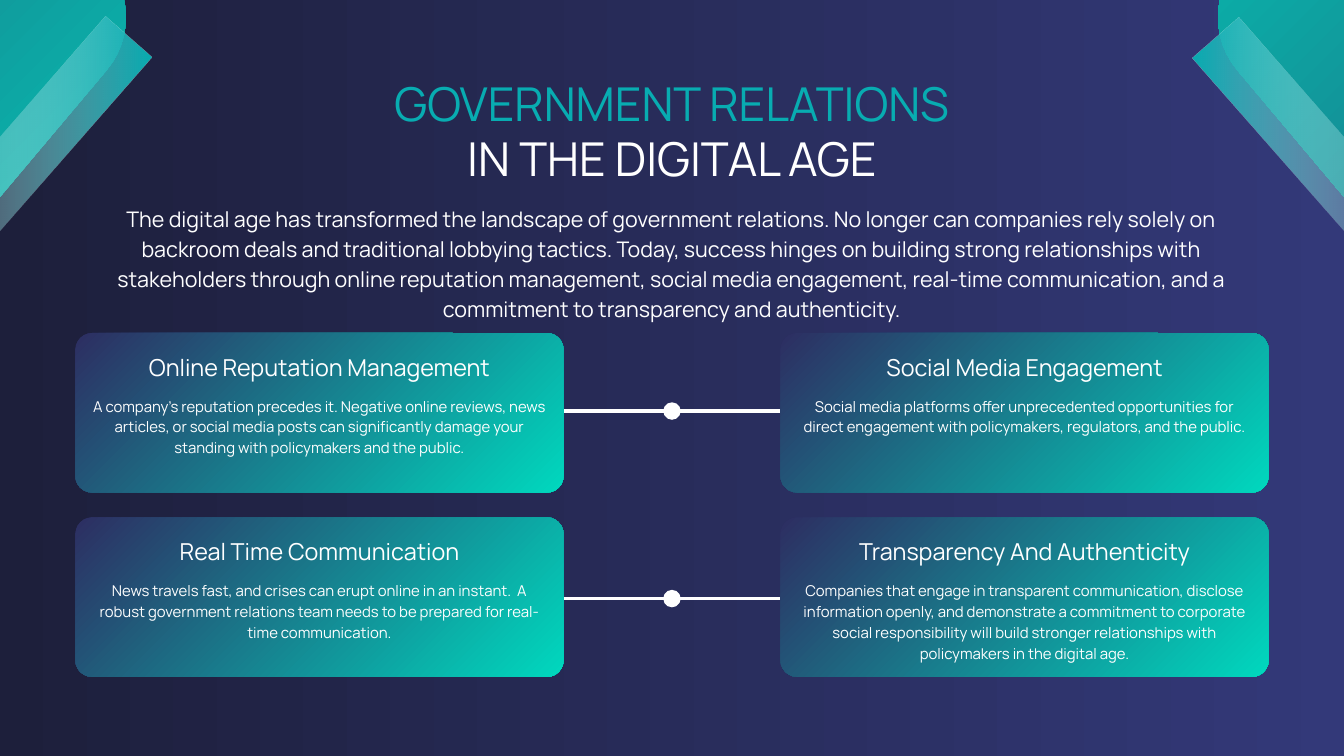
import collections
import dataclasses
import pptx
import pptx.dml.color
import pptx.enum.shapes
import pptx.enum.text
import pptx.oxml
import pptx.oxml.ns
import pptx.util

Cm = pptx.util.Cm
Pt = pptx.util.Pt
Shape = pptx.enum.shapes.MSO_SHAPE
Box = collections.namedtuple("Box", "left top width height")
Style = collections.namedtuple("Style", "size spacing color")


@dataclasses.dataclass(frozen=True)
class Theme:
    font: str = "Manrope"
    white: str = "FFFFFF"
    cyan: str = "08ACB1"
    indigo: str = "2D2E62"
    mint: str = "00D8BE"
    night: str = "1D1F3B"
    dusk: str = "333979"
    heading_accent: Style = Style(50, 70, "08ACB1")
    heading: Style = Style(50, 70, "FFFFFF")
    intro: Style = Style(23, 32.2, "FFFFFF")
    card_title: Style = Style(25, 35, "FFFFFF")
    card_body: Style = Style(16, 22.4, "FFFFFF")


THEME = Theme()
SLIDE = Box(0, 0, 50.8, 28.58)
CARD_MARGIN, CARD_TOP, CARD_WIDTH, CARD_HEIGHT, ROW_STEP = 2.85, 12.59, 18.45, 6.03, 6.97
LINK_OFFSETS = (2.95, 3.07)
DIAMOND_TIP = ((0, -18.43), (0.66, -18.43), (1.28, -18.13), (1.71, -17.63))
DIAMOND_SIDE = ((14.86, -2.01), (15.84, -0.84), (15.84, 0.84), (14.86, 2.01))
ROWS = (
    (
        ("Online Reputation Management",
         "A company's reputation precedes it. Negative online reviews, news articles, or social media "
         "posts can significantly damage your standing with policymakers and the public."),
        ("Social Media Engagement",
         "Social media platforms offer unprecedented opportunities for direct engagement with "
         "policymakers, regulators, and the public."),
    ),
    (
        ("Real Time Communication",
         "News travels fast, and crises can erupt online in an instant.  A robust government relations "
         "team needs to be prepared for real-time communication."),
        ("Transparency And Authenticity",
         "Companies that engage in transparent communication, disclose information openly, and "
         "demonstrate a commitment to corporate social responsibility will build stronger "
         "relationships with policymakers in the digital age."),
    ),
)
INTRO = (
    "The digital age has transformed the landscape of government relations. No longer can companies "
    "rely solely on backroom deals and traditional lobbying tactics. Today, success hinges on building "
    "strong relationships with stakeholders through online reputation management, social media "
    "engagement, real-time communication, and a commitment to transparency and authenticity."
)


def rgb(color):
    return pptx.dml.color.RGBColor.from_string(color)


def emu(box):
    return [Cm(length) for length in box]


def paint_gradient(fill, colors, angle):
    fill.gradient()
    fill.gradient_angle = angle
    for stop, color in zip(fill.gradient_stops, colors):
        stop.color.rgb = rgb(color)


def strip_outline(shape):
    shape.shadow.inherit = False
    shape.line.fill.background()


def add_text(slide, box, text, style):
    frame = slide.shapes.add_textbox(*emu(box)).text_frame
    frame.margin_left = frame.margin_top = frame.margin_right = frame.margin_bottom = 0
    frame.word_wrap = True
    frame.auto_size = pptx.enum.text.MSO_AUTO_SIZE.SHAPE_TO_FIT_TEXT
    frame.text = text
    paragraph = frame.paragraphs[0]
    paragraph.alignment = pptx.enum.text.PP_ALIGN.CENTER
    paragraph.line_spacing = Pt(style.spacing)
    font = paragraph.runs[0].font
    font.name, font.size = THEME.font, Pt(style.size)
    font.color.rgb = rgb(style.color)


def curve(points, steps=12):
    for step in range(steps + 1):
        t = step / steps
        weights = ((1 - t) ** 3, 3 * t * (1 - t) ** 2, 3 * t * t * (1 - t), t ** 3)
        yield tuple(sum(w * p[axis] for w, p in zip(weights, points)) for axis in (0, 1))


def add_diamond(slide, box, colors):
    tip, side = list(curve(DIAMOND_TIP)), list(curve(DIAMOND_SIDE))
    right_half = tip + side + [(x, -y) for x, y in reversed(tip)]
    outline = right_half + [(-x, -y) for x, y in right_half]
    center_x, center_y = box.left + box.width / 2, box.top + box.height / 2
    corners = [(Cm(center_x + x), Cm(center_y + y)) for x, y in outline]
    builder = slide.shapes.build_freeform(*corners[0])
    builder.add_line_segments(corners[1:], close=True)
    diamond = builder.convert_to_shape()
    strip_outline(diamond)
    paint_gradient(diamond.fill, colors, 315)


def add_ribbon(slide, box, rotation, colors):
    ribbon = slide.shapes.add_shape(Shape.RECTANGLE, *emu(box))
    ribbon.rotation = rotation
    strip_outline(ribbon)
    paint_gradient(ribbon.fill, colors, 0)
    properties = ribbon.fill._xPr
    properties.find(pptx.oxml.ns.qn("a:gradFill")).set("rotWithShape", "0")
    for color in properties.iter(pptx.oxml.ns.qn("a:srgbClr")):
        if color.get("val") == THEME.white:
            color.append(pptx.oxml.parse_xml(f'<a:alpha {pptx.oxml.ns.nsdecls("a")} val="0"/>'))


def add_corner(slide, box, mirrored):
    def place(left, top, width, height):
        x = box.width - left - width if mirrored else left
        return Box(box.left + x, box.top + top, width, height)

    order = -1 if mirrored else 1
    add_diamond(slide, place(-26.67, -17.78, 31.67, 36.86), (THEME.indigo, THEME.mint)[::order])
    add_ribbon(slide, place(-5.03, 4.72, 11.91, 2.34), 228.7 if mirrored else 131.3,
               (THEME.white, THEME.cyan)[::order])


def add_header(slide, box):
    lines = (
        (29.82, 0, 2.51, "GOVERNMENT RELATIONS", THEME.heading_accent),
        (24, 2.11, 2.51, "IN THE DIGITAL AGE", THEME.heading),
        (45.1, 5.16, 4.45, INTRO, THEME.intro),
    )
    for width, top, height, text, style in lines:
        left = box.left + (box.width - width) / 2
        add_text(slide, Box(left, box.top + top, width, height), text, style)


def add_card(slide, box, title, body):
    panel = slide.shapes.add_shape(Shape.ROUNDED_RECTANGLE, *emu(box))
    panel.adjustments[0] = 0.63 / box.height
    strip_outline(panel)
    paint_gradient(panel.fill, (THEME.indigo, THEME.mint), 315)
    for inset, top, height, text, style in ((1.57, 0.58, 1.22, title, THEME.card_title),
                                            (0.58, 2.31, 3.1, body, THEME.card_body)):
        add_text(slide, Box(box.left + inset, box.top + top, box.width - 2 * inset, height), text, style)


def add_row(slide, box, cards, link_offset):
    link_y, overlap, dot_size = box.top + link_offset, 4.92, 0.66
    reach = CARD_WIDTH - overlap
    link = slide.shapes.add_connector(
        pptx.enum.shapes.MSO_CONNECTOR.STRAIGHT,
        Cm(box.left + reach), Cm(link_y), Cm(box.left + box.width - reach), Cm(link_y))
    link.line.color.rgb = rgb(THEME.white)
    link.line.width = Pt(3.75)
    link._element.spPr.append(pptx.oxml.parse_xml(f'<a:effectLst {pptx.oxml.ns.nsdecls("a")}/>'))
    for left, (title, body) in zip((box.left, box.left + box.width - CARD_WIDTH), cards):
        add_card(slide, Box(left, box.top, CARD_WIDTH, box.height), title, body)
    dot = slide.shapes.add_shape(Shape.OVAL, *emu(Box(
        box.left + (box.width - dot_size) / 2, link_y - dot_size / 2, dot_size, dot_size)))
    strip_outline(dot)
    dot.fill.solid()
    dot.fill.fore_color.rgb = rgb(THEME.white)


def main():
    presentation = pptx.Presentation()
    presentation.slide_width, presentation.slide_height = Cm(SLIDE.width), Cm(SLIDE.height)
    slide = presentation.slides.add_slide(presentation.slide_layouts[6])
    paint_gradient(slide.background.fill, (THEME.night, THEME.dusk), 0)
    for mirrored in (False, True):
        add_corner(slide, SLIDE, mirrored)
    add_header(slide, Box(0, 2.46, SLIDE.width, 9.61))
    for index, (cards, link_offset) in enumerate(zip(ROWS, LINK_OFFSETS)):
        row = Box(CARD_MARGIN, CARD_TOP + index * ROW_STEP, SLIDE.width - 2 * CARD_MARGIN, CARD_HEIGHT)
        add_row(slide, row, cards, link_offset)
    presentation.save("out.pptx")


if __name__ == "__main__":
    main()
